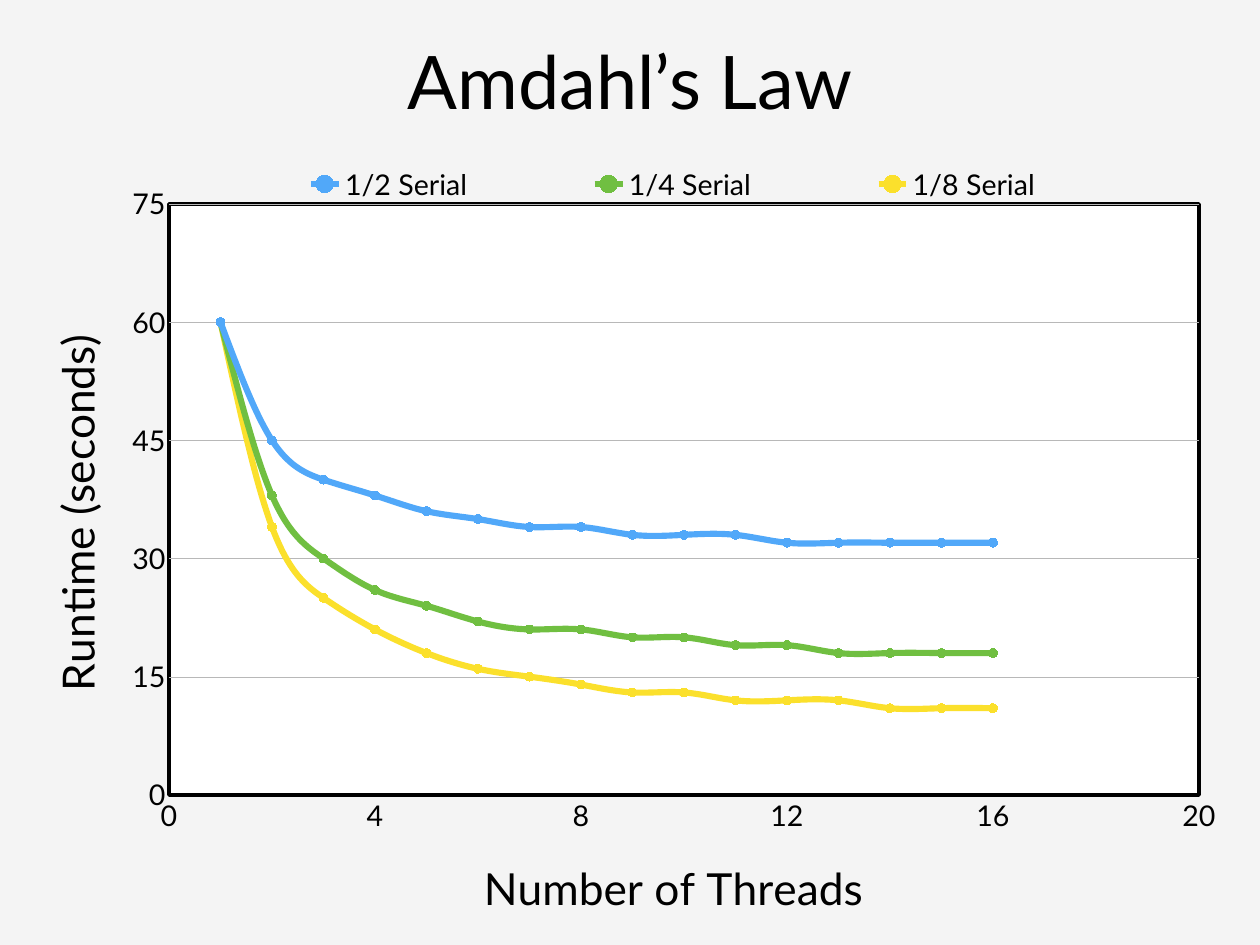
"""Build a slide with a scatter chart of Amdahl's law."""
from lxml import etree
from pptx import Presentation
from pptx import util as u
from pptx.chart.data import XyChartData
from pptx.dml.color import RGBColor
from pptx.enum import chart as charts, text
from pptx.oxml import parse_xml
from pptx.oxml.ns import nsdecls, qn

PX = 10320
FONT = "Lato"
BLACK, WHITE, BACKGROUND, GRID = "000000", "FFFFFF", "F4F4F4", "B8B8B8"
SLIDE_SIZE = (1260, 945)
TITLE = "Amdahl’s Law"
TITLE_BOX = (92, 8, 1076, 144)
CHART_BOX = (38, 157, 1178, 771)
PLOT_BOX = (169, 204, 1030, 592)
LEGEND_BOX = (193, 165, 960, 38)
THREADS = range(1, 17)
SERIAL_RUNTIME = 60
SERIES = [
    ("1/2 Serial", 1 / 2, "51A8F9"),
    ("1/4 Serial", 1 / 4, "70BF41"),
    ("1/8 Serial", 1 / 8, "FBE02C"),
]
X_AXIS = ("Number of Threads", 20, 4, (476, 850), 0)
Y_AXIS = ("Runtime (seconds)", 75, 15, (38, 327), -5400000)


def color(value):
    return RGBColor.from_string(value)


def px(*lengths):
    return [u.Emu(length * PX) for length in lengths]


def style_font(font, size, fill=BLACK):
    font.name, font.size, font.bold = FONT, u.Pt(size), False
    font.color.rgb = color(fill)


def style_line(line, fill, width):
    line.color.rgb = color(fill)
    line.width = u.Pt(width)


def write(frame, words, size, fill=BLACK, align=text.PP_ALIGN.CENTER):
    paragraph = frame.paragraphs[0]
    paragraph.alignment = align
    run = paragraph.add_run()
    run.text = words
    style_font(run.font, size, fill)


def runtime(serial, count):
    return round(SERIAL_RUNTIME * serial + SERIAL_RUNTIME * (1 - serial) / count)


def place(element, box, index=1, inner=False):
    layout = element.find(qn("c:layout"))
    if layout is None:
        layout = etree.Element(qn("c:layout"))
        element.insert(index, layout)
    manual = etree.SubElement(layout, qn("c:manualLayout"))
    left, top, width, height = CHART_BOX
    fractions = [(box[0] - left) / width, (box[1] - top) / height]
    fractions += [length / whole for length, whole in zip(box[2:], (width, height))]
    settings = [("layoutTarget", "inner")] if inner else []
    settings += [("xMode", "edge"), ("yMode", "edge")]
    settings += [(key, f"{part:.4f}") for key, part in zip("xywh", fractions)]
    for key, value in settings:
        etree.SubElement(manual, qn(f"c:{key}")).set("val", value)


def style_axis(chart, axis, index, words, maximum, step, corner, rotation):
    axis.minimum_scale, axis.maximum_scale, axis.major_unit = 0, maximum, step
    axis.major_tick_mark = axis.minor_tick_mark = charts.XL_TICK_MARK.NONE
    axis.tick_labels.number_format = "General"
    axis.tick_labels.number_format_is_linked = False
    style_font(axis.tick_labels.font, 23.2)
    write(axis.axis_title.text_frame, words, 36)
    title = chart.element.xpath(".//c:valAx/c:title")[index]
    title.find(".//" + qn("a:bodyPr")).set("rot", str(rotation))
    place(title, corner)


def add_runtime_chart(slide):
    data = XyChartData()
    for name, serial, _ in SERIES:
        points = data.add_series(name)
        for count in THREADS:
            points.add_data_point(count, runtime(serial, count))
    chart = slide.shapes.add_chart(
        charts.XL_CHART_TYPE.XY_SCATTER_SMOOTH, *px(*CHART_BOX), data).chart
    style_font(chart.font, 10)
    chart.has_title = False
    chart.plots[0].vary_by_categories = False

    for series, (_, _, fill) in zip(chart.plots[0].series, SERIES):
        style_line(series.format.line, fill, 5)
        marker = series.marker
        marker.style, marker.size = charts.XL_MARKER_STYLE.CIRCLE, 7
        marker.format.fill.solid()
        marker.format.fill.fore_color.rgb = color(fill)
    for smooth in chart.element.xpath(".//c:ser/c:smooth"):
        smooth.set("val", "1")

    axes = (chart.category_axis, chart.value_axis)
    for index, (axis, content) in enumerate(zip(axes, (X_AXIS, Y_AXIS))):
        style_axis(chart, axis, index, *content)
    chart.category_axis.has_major_gridlines = False
    style_line(chart.category_axis.format.line, BLACK, 3)
    chart.value_axis.format.line.fill.background()
    style_line(chart.value_axis.major_gridlines.format.line, GRID, 0.25)

    chart.has_legend = True
    chart.legend.position = charts.XL_LEGEND_POSITION.TOP
    chart.legend.include_in_layout = True
    style_font(chart.legend.font, 23.2)
    place(chart.element.xpath(".//c:legend")[0], LEGEND_BOX)

    plot_area = chart.element.xpath(".//c:plotArea")[0]
    place(plot_area, PLOT_BOX, 0, True)
    plot_area.append(parse_xml(
        f'<c:spPr {nsdecls("c", "a")}>'
        f'<a:solidFill><a:srgbClr val="{WHITE}"/></a:solidFill>'
        f'<a:ln w="{u.Pt(3)}"><a:solidFill><a:srgbClr val="{BLACK}"/></a:solidFill></a:ln>'
        '</c:spPr>'))


def main():
    presentation = Presentation()
    presentation.slide_width, presentation.slide_height = px(*SLIDE_SIZE)
    slide = presentation.slides.add_slide(presentation.slide_layouts[6])
    slide.background.fill.solid()
    slide.background.fill.fore_color.rgb = color(BACKGROUND)

    frame = slide.shapes.add_textbox(*px(*TITLE_BOX)).text_frame
    frame.word_wrap = True
    frame.vertical_anchor = text.MSO_ANCHOR.MIDDLE
    write(frame, TITLE, 60)

    add_runtime_chart(slide)
    presentation.save("out.pptx")


if __name__ == "__main__":
    main()
